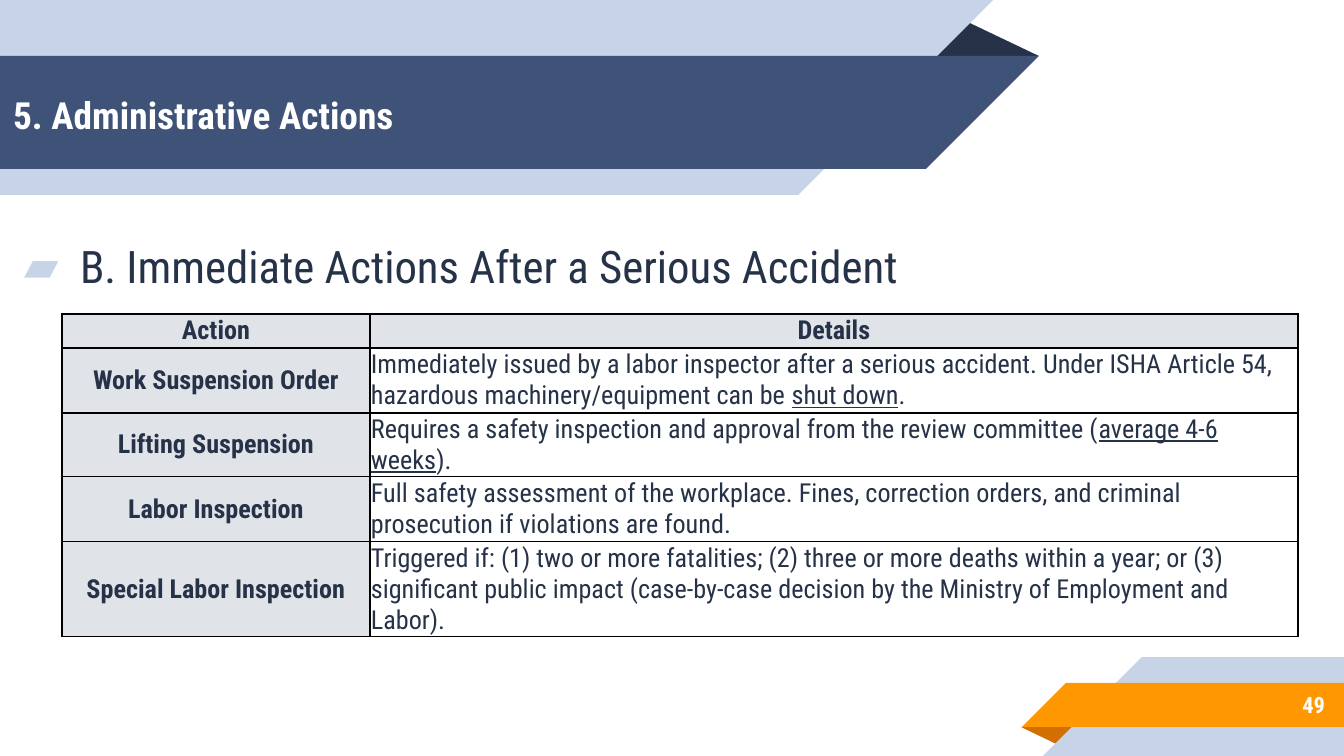
from dataclasses import dataclass

from lxml.etree import SubElement
from pptx import Presentation
from pptx.dml.color import RGBColor
from pptx.enum.shapes import MSO_SHAPE as Shape
from pptx.enum.text import MSO_ANCHOR as Anchor, MSO_AUTO_SIZE as AutoSize, PP_ALIGN as Align
from pptx.oxml.ns import qn
from pptx.util import Pt

TITLE = "5. Administrative Actions"
HEADING = "B. Immediate Actions After a Serious Accident"
PAGE_NUMBER = "49"
UNDERLINE_MARK = "_"
ROWS = [
    ("Action", "Details"),
    ("Work Suspension Order",
     "Immediately issued by a labor inspector after a serious accident. Under ISHA Article 54, "
     "hazardous machinery/equipment can be _shut down_."),
    ("Lifting Suspension",
     "Requires a safety inspection and approval from the review committee (_average 4-6 weeks_)."),
    ("Labor Inspection",
     "Full safety assessment of the workplace. Fines, correction orders, and criminal "
     "prosecution if violations are found."),
    ("Special Labor Inspection",
     "Triggered if: (1) two or more fatalities; (2) three or more deaths within a year; or (3) "
     "significant public impact (case-by-case decision by the Ministry of Employment and Labor)."),
]
COLUMN_WIDTHS = (308, 928)
ROW_HEIGHTS = (34, 65, 64, 65, 95)
PAGE_WIDTH, PAGE_HEIGHT = 1344, 756


@dataclass(frozen=True)
class Theme:
    font: str = "Roboto Condensed"
    ink: str = "263248"
    navy: str = "3F5378"
    pale: str = "C7D3E6"
    orange: str = "FF9800"
    rust: str = "D26F00"
    label: str = "E0E4E9"
    white: str = "FFFFFF"
    border: str = "000000"
    title_size: int = 20
    heading_size: int = 24
    table_size: int = 14
    number_size: int = 12


THEME = Theme()
FOLDS = [
    (1021, 727, 58, 19, 180, THEME.rust),
    (925, 19, 114, 37, 0, THEME.ink),
]
TOP_BANDS = [(0, 798, 195, THEME.pale), (56, 926, 113, THEME.navy)]
BOTTOM_BANDS = [(657, 1142, 99, THEME.pale), (683, 1066, 44, THEME.orange)]


def px(length):
    return round(length * 914400 / 134.4)


def place(shape, left, top, width, height):
    shape.left, shape.top, shape.width, shape.height = map(px, (left, top, width, height))


def add_block(page, kind, left, top, width, height, color, rotation=0):
    block = page.shapes.add_shape(kind, *map(px, (left, top, width, height)))
    block.shadow.inherit = False
    block.fill.solid()
    block.fill.fore_color.rgb = RGBColor.from_string(color)
    block.line.fill.background()
    block.rotation = rotation
    return block


def style_font(font, size, color, bold=False):
    font.name = THEME.font
    font.size = Pt(size)
    font.bold = bold
    font.color.rgb = RGBColor.from_string(color)


def write_line(box, text, size, color, bold=False, align=Align.LEFT):
    frame = box.text_frame
    frame.text = text
    frame.word_wrap = True
    frame.auto_size = AutoSize.NONE
    frame.vertical_anchor = Anchor.MIDDLE
    frame.margin_left = frame.margin_right = frame.margin_top = frame.margin_bottom = px(13)
    para = frame.paragraphs[0]
    para.alignment = align
    para.space_before = Pt(0)
    para.line_spacing = 1.0
    style_font(para.runs[0].font, size, color, bold)
    return para


def add_bullet(para, char, color):
    properties = para._p.get_or_add_pPr()
    properties.set("marL", str(px(67)))
    properties.set("indent", str(-px(56)))
    SubElement(SubElement(properties, qn("a:buClr")), qn("a:srgbClr"), val=color)
    SubElement(properties, qn("a:buFont"), typeface=THEME.font)
    SubElement(properties, qn("a:buChar"), char=char)


def draw_bands(page):
    for left, top, width, height, rotation, color in FOLDS:
        fold = add_block(page, Shape.ISOSCELES_TRIANGLE, left, top, width, height, color, rotation)
        fold.adjustments[0] = 0.32
    for top, edge, size, color in TOP_BANDS:
        add_block(page, Shape.RECTANGLE, 0, top, edge, size, color)
        add_block(page, Shape.RIGHT_TRIANGLE, edge, top, size, size, color, 90)
    for top, edge, size, color in BOTTOM_BANDS:
        add_block(page, Shape.RECTANGLE, edge, top, PAGE_WIDTH - edge, size, color)
        add_block(page, Shape.RIGHT_TRIANGLE, edge - size, top, size, size, color, 270)


def fill_cell(cell, text, is_label):
    cell.margin_left = cell.margin_right = cell.margin_top = cell.margin_bottom = px(1)
    cell.vertical_anchor = Anchor.MIDDLE
    para = cell.text_frame.paragraphs[0]
    para.alignment = Align.CENTER if is_label else Align.LEFT
    for index, part in enumerate(text.split(UNDERLINE_MARK)):
        span = para.add_run()
        span.text = part
        style_font(span.font, THEME.table_size, THEME.ink, is_label)
        span.font.underline = index % 2 == 1
    properties = cell._tc.get_or_add_tcPr()
    for side in ("lnL", "lnR", "lnT", "lnB"):
        line = SubElement(properties, qn(f"a:{side}"), w=str(Pt(0.75)))
        SubElement(SubElement(line, qn("a:solidFill")), qn("a:srgbClr"), val=THEME.border)
    if is_label:
        cell.fill.solid()
        cell.fill.fore_color.rgb = RGBColor.from_string(THEME.label)
    else:
        cell.fill.background()


def draw_table(page):
    area = map(px, (62, 314, sum(COLUMN_WIDTHS), sum(ROW_HEIGHTS)))
    table = page.shapes.add_table(len(ROWS), len(COLUMN_WIDTHS), *area).table
    table.first_row = table.horz_banding = False
    for column, width in zip(table.columns, COLUMN_WIDTHS):
        column.width = px(width)
    for row, height in zip(table.rows, ROW_HEIGHTS):
        row.height = px(height)
    for r, texts in enumerate(ROWS):
        for c, text in enumerate(texts):
            fill_cell(table.cell(r, c), text, r == 0 or c == 0)


def main():
    deck = Presentation()
    deck.slide_width, deck.slide_height = px(PAGE_WIDTH), px(PAGE_HEIGHT)
    page = deck.slides.add_slide(deck.slide_layouts[1])
    title, body = page.placeholders
    draw_bands(page)

    for holder in (title, body):
        page.shapes.element.append(holder.element)
    place(title, 0, 58, 978, 113)
    write_line(title, TITLE, THEME.title_size, THEME.white, bold=True)
    place(body, 0, 1, PAGE_WIDTH, 578)
    heading = write_line(body, HEADING, THEME.heading_size, THEME.ink)
    body.text_frame.margin_bottom = px(61)
    add_bullet(heading, "▰", THEME.pale)

    number = page.shapes.add_textbox(*map(px, (1120, 681, 218, 47)))
    write_line(number, PAGE_NUMBER, THEME.number_size, THEME.white, bold=True, align=Align.RIGHT)
    draw_table(page)
    deck.save("out.pptx")


if __name__ == "__main__":
    main()
